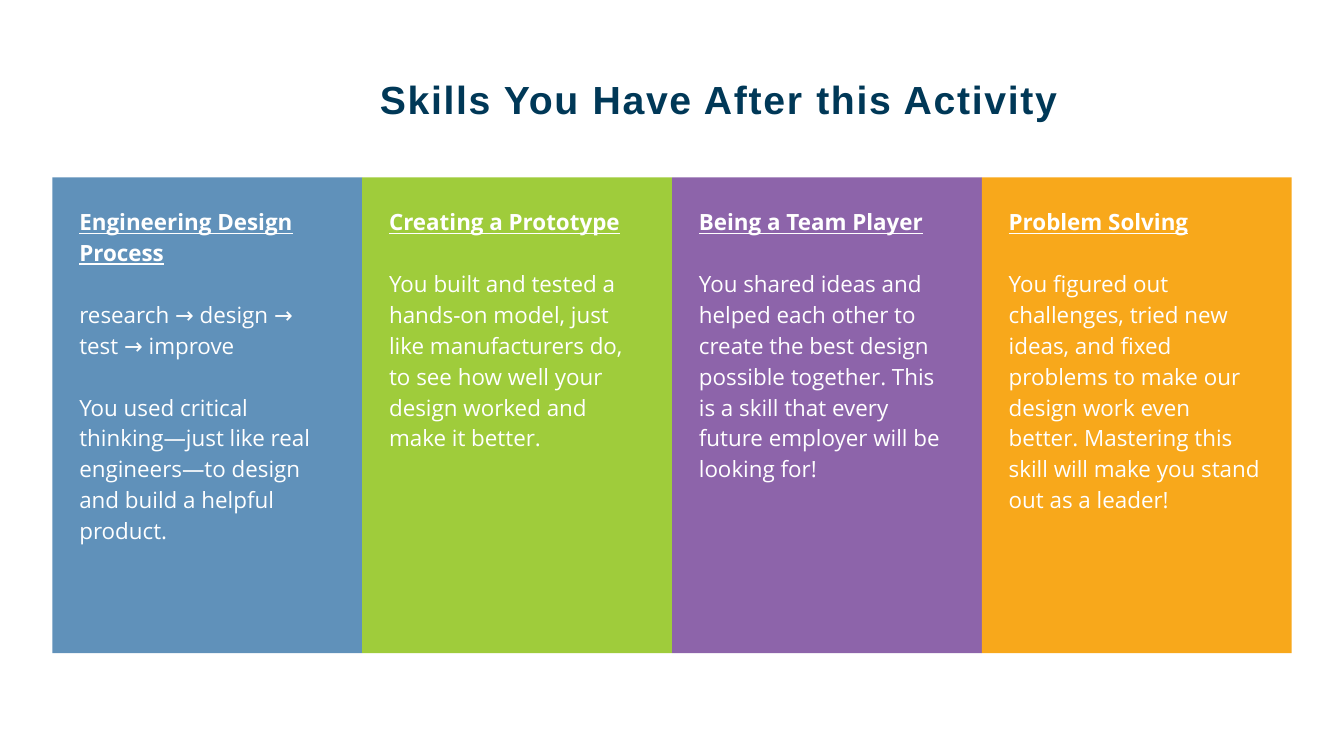
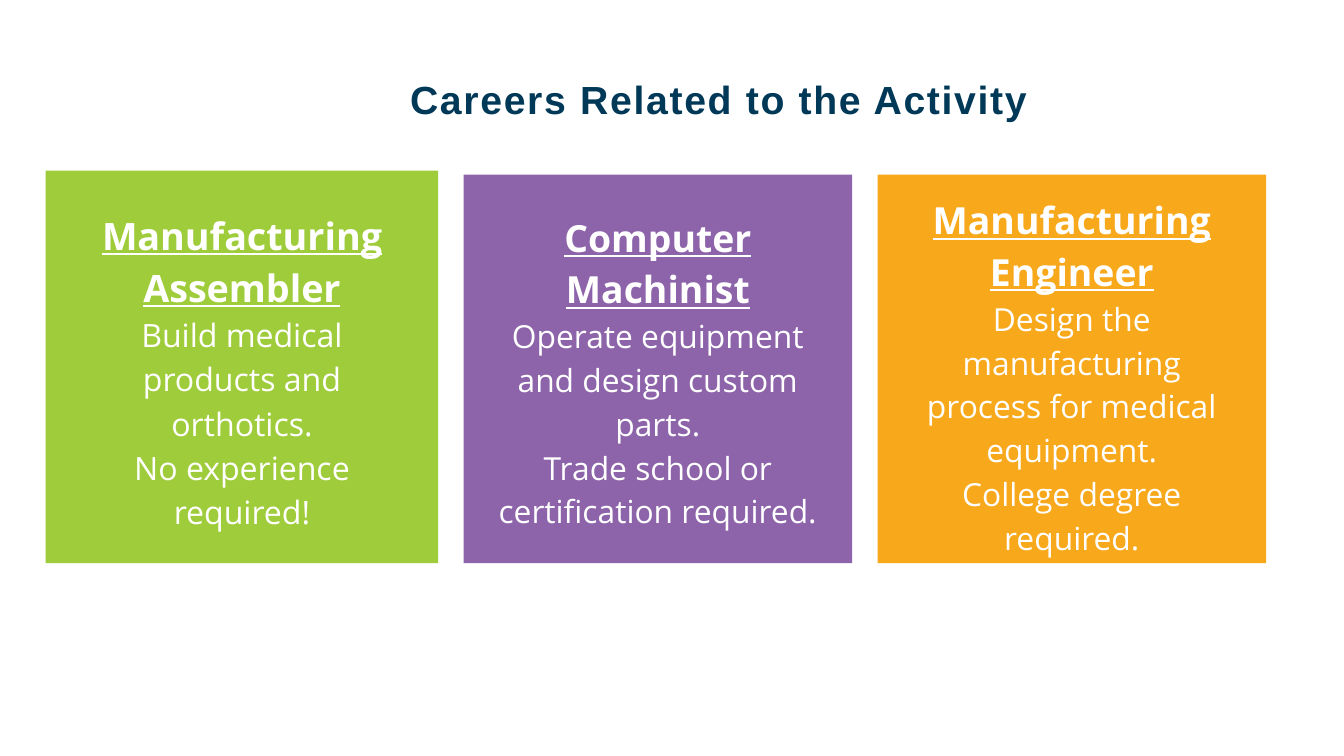
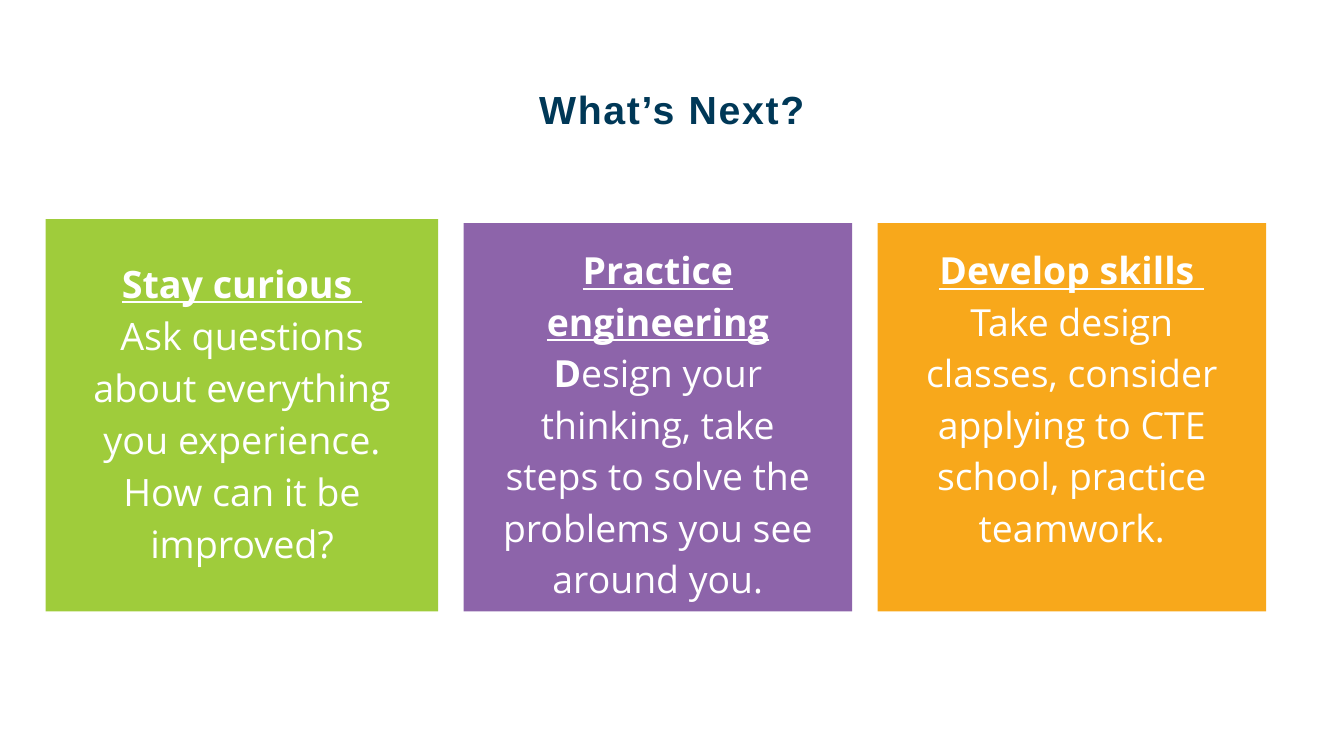
import pptx
import pptx.dml.color
import pptx.enum.shapes
import pptx.enum.text
import pptx.util
from dataclasses import dataclass

Inches = pptx.util.Inches
Pt = pptx.util.Pt
ALIGN = pptx.enum.text.PP_ALIGN


@dataclass(frozen=True)
class Theme:
    navy: str = "003857"
    blue: str = "6091BA"
    green: str = "9FCC3B"
    purple: str = "8D64AA"
    orange: str = "F8A81B"
    white: str = "FFFFFF"
    title_font: str = "Arial"
    body_font: str = "Open Sans"
    title_size: float = 21
    title_tracking: int = 90
    skill_size: float = 12
    skill_gap: float = 16.56
    line_spacing: float = 1.15


@dataclass(frozen=True)
class CardStyle:
    left: float
    side: float
    inset: float
    color: str
    heading_size: float
    detail_size: float


THEME = Theme()

CARD_STYLES = [
    CardStyle(0.34, 2.92, 0.26, THEME.green, 20.2, 17.2),
    CardStyle(3.45, 2.89, 0.25, THEME.purple, 20, 17),
    CardStyle(6.53, 2.89, 0.25, THEME.orange, 20, 17),
]

SKILLS = [
    (THEME.blue, "Engineering Design Process", [
        "research → design → test → improve",
        "You used critical thinking—just like real engineers—to design and build a helpful product.",
    ]),
    (THEME.green, "Creating a Prototype", [
        "You built and tested a hands‑on model, just like manufacturers do, "
        "to see how well your design worked and make it better.",
    ]),
    (THEME.purple, "Being a Team Player", [
        "You shared ideas and helped each other to create the best design possible together. "
        "This is a skill that every future employer will be looking for!",
    ]),
    (THEME.orange, "Problem Solving", [
        "You figured out challenges, tried new ideas, and fixed problems to make our design "
        "work even better. Mastering this skill will make you stand out as a leader!",
    ]),
]

CAREERS = [
    (1.27, "Manufacturing Assembler",
     ["Build medical products and orthotics.", "No experience required!"]),
    (1.3, "Computer Machinist",
     ["Operate equipment and design custom parts.", "Trade school or certification required."]),
    (1.17, "Manufacturing Engineer",
     ["Design the manufacturing process for medical equipment.", "College degree required."]),
]


def rgb(color):
    return pptx.dml.color.RGBColor.from_string(color)


def add_slide(deck):
    slide = deck.slides.add_slide(deck.slide_layouts[6])
    slide.background.fill.solid()
    slide.background.fill.fore_color.rgb = rgb(THEME.white)
    return slide


def add_panel(slide, left, top, width, height, color):
    panel = slide.shapes.add_shape(
        pptx.enum.shapes.MSO_SHAPE.RECTANGLE,
        Inches(left), Inches(top), Inches(width), Inches(height))
    panel.shadow.inherit = False
    panel.fill.solid()
    panel.fill.fore_color.rgb = rgb(color)
    panel.line.fill.background()


def add_text_frame(slide, left, top, width, height, inset):
    frame = slide.shapes.add_textbox(
        Inches(left), Inches(top), Inches(width), Inches(height)).text_frame
    frame.word_wrap = True
    frame.vertical_anchor = pptx.enum.text.MSO_ANCHOR.TOP
    frame.margin_left = frame.margin_right = Inches(inset)
    frame.margin_top = frame.margin_bottom = Inches(inset)
    return frame


def add_run(paragraph, text, size, color=THEME.white, font=THEME.body_font,
            bold=False, underline=False):
    run = paragraph.add_run()
    run.text = text
    run.font.size = Pt(size)
    run.font.name = font
    run.font.color.rgb = rgb(color)
    run.font.bold = bold
    run.font.underline = underline
    return run


def add_heading(paragraph, text, size):
    add_run(paragraph, text, size, bold=True, underline=True)


def format_paragraph(paragraph, align, gap=0):
    paragraph.alignment = align
    paragraph.line_spacing = THEME.line_spacing
    paragraph.space_before = Pt(gap)
    return paragraph


def add_title(slide, text, left=-0.58, top=0.41):
    frame = add_text_frame(slide, left, top, 11.86, 0.75, 0.1)
    paragraph = format_paragraph(frame.paragraphs[0], ALIGN.CENTER)
    run = add_run(paragraph, text, THEME.title_size, THEME.navy, THEME.title_font, bold=True)
    run.font._element.set("spc", str(THEME.title_tracking))


def add_details(frame, details, size, align, gap=0):
    for detail in details:
        add_run(format_paragraph(frame.add_paragraph(), align, gap), detail, size)


def add_skill_columns(slide):
    left, right, top, height = 0.39, 9.61, 1.32, 3.54
    width = (right - left) / len(SKILLS)
    for index, (color, heading, details) in enumerate(SKILLS):
        column_left = left + index * width
        add_panel(slide, column_left, top, width, height, color)
        frame = add_text_frame(slide, column_left, top, width, height, 0.2)
        add_heading(format_paragraph(frame.paragraphs[0], ALIGN.LEFT), heading, THEME.skill_size)
        add_details(frame, details, THEME.skill_size, ALIGN.LEFT, THEME.skill_gap)


def add_card(slide, style, bottom, text_top, heading):
    add_panel(slide, style.left, bottom - style.side, style.side, style.side, style.color)
    frame = add_text_frame(slide, style.left, text_top, style.side, 0.99, style.inset)
    add_heading(format_paragraph(frame.paragraphs[0], ALIGN.CENTER), heading, style.heading_size)
    return frame


def build_skills(deck):
    slide = add_slide(deck)
    add_title(slide, "Skills You Have After this Activity")
    add_skill_columns(slide)


def build_careers(deck):
    slide = add_slide(deck)
    add_title(slide, "Careers Related to the Activity")
    for style, (text_top, career, details) in zip(CARD_STYLES, CAREERS):
        frame = add_card(slide, style, 4.19, text_top, career)
        add_details(frame, details, style.detail_size, ALIGN.CENTER)


def build_next_steps(deck):
    slide = add_slide(deck)
    add_title(slide, "What’s Next?", left=-0.93, top=0.48)
    bottom = 4.55
    curious, practice, develop = CARD_STYLES

    frame = add_card(slide, curious, bottom, 1.63, "Stay curious ")
    add_details(frame, ["Ask questions about everything you experience. How can it be improved?"],
                curious.heading_size, ALIGN.CENTER)

    frame = add_card(slide, practice, bottom, 1.54, "Practice engineering ")
    paragraph = frame.paragraphs[0]
    add_run(paragraph, "D", practice.heading_size, bold=True)
    add_run(paragraph, "esign your thinking, take steps to solve the problems you see around you.",
            practice.heading_size)

    frame = add_card(slide, develop, bottom, 1.54, "Develop skills ")
    add_details(frame, ["Take design classes, consider applying to CTE school, practice teamwork."],
                develop.heading_size, ALIGN.CENTER)


def main():
    deck = pptx.Presentation()
    deck.slide_width = Inches(10)
    deck.slide_height = deck.slide_width * 9 // 16
    build_skills(deck)
    build_careers(deck)
    build_next_steps(deck)
    deck.save("out.pptx")


if __name__ == "__main__":
    main()
